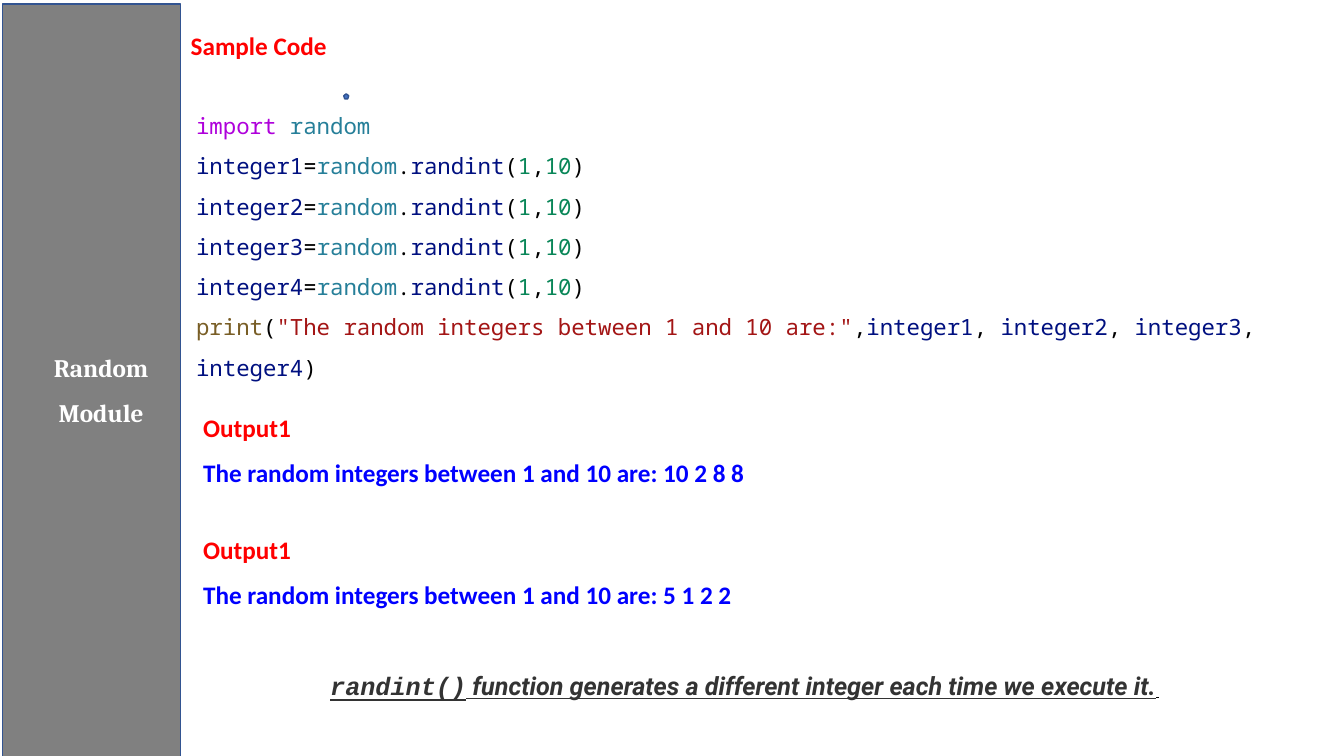
from pptx import Presentation
from pptx.dml.color import RGBColor
from pptx.enum.shapes import MSO_SHAPE as Shape
from pptx.enum.text import MSO_ANCHOR as Anchor, PP_ALIGN as Align
from pptx.util import Pt

WHITE = RGBColor(0xFF, 0xFF, 0xFF)
BLACK = RGBColor(0, 0, 0)
GRAY = RGBColor(0x80, 0x80, 0x80)
DARK = RGBColor(0x33, 0x33, 0x33)
RED = RGBColor(0xFF, 0, 0)
BLUE = RGBColor(0, 0, 0xFF)
STEEL = RGBColor(0x44, 0x72, 0xC4)
EDGE = RGBColor(0x32, 0x54, 0x91)
PURPLE = RGBColor(0xAF, 0, 0xDB)
TEAL = RGBColor(0x26, 0x7F, 0x99)
NAVY = RGBColor(0, 0x10, 0x80)
GREEN = RGBColor(0x09, 0x86, 0x58)
BROWN = RGBColor(0x79, 0x5E, 0x26)
MAROON = RGBColor(0xA3, 0x15, 0x15)


def style(font, name, size, color, bold=False):
    font.name, font.size, font.bold = name, Pt(size), bold
    font.color.rgb = color


def add_text(left, top, width, height):
    """Add an empty wrapping text box and return its text frame."""
    frame = slide.shapes.add_textbox(Pt(left), Pt(top), Pt(width), Pt(height)).text_frame
    frame.word_wrap = True
    return frame


deck = Presentation()
deck.slide_width, deck.slide_height = Pt(960), Pt(540)
slide = deck.slides.add_slide(deck.slide_layouts[5])

# Title
title = slide.shapes.title
title.left, title.top, title.width, title.height = Pt(129), Pt(18), Pt(248), Pt(29)
title.text_frame.vertical_anchor = Anchor.TOP
title.text_frame.text = "Sample Code"
para = title.text_frame.paragraphs[0]
para.alignment = Align.LEFT
style(para.font, "Calibri", 18, RED, True)

# Sidebar and small marker
bar = slide.shapes.add_shape(Shape.RECTANGLE, Pt(2), Pt(3), Pt(127), Pt(540))
mark = slide.shapes.add_shape(Shape.REGULAR_PENTAGON, Pt(245.5), Pt(67), Pt(3.6), Pt(3.6))
for shape, fill in ((bar, GRAY), (mark, STEEL)):
    shape.shadow.inherit = False
    shape.fill.solid()
    shape.fill.fore_color.rgb = fill
    shape.line.color.rgb = EDGE
    shape.line.width = Pt(1)
bar.text_frame.vertical_anchor = Anchor.MIDDLE
bar.text_frame.text = "Random Module"
para = bar.text_frame.paragraphs[0]
para.alignment = Align.CENTER
para.line_spacing = 1.5
para.space_before = Pt(6)
para._p.get_or_add_pPr().set("marL", str(Pt(13.5)))
style(para.font, "Cambria", 18, WHITE, True)

# Code listing
names = [f"integer{n}" for n in range(1, 5)]
lines = [[("import ", PURPLE), ("random", TEAL)]]
for name in names:
    lines.append([(name, NAVY), ("=", BLACK), ("random", TEAL), (".", BLACK),
                  ("randint", NAVY), ("(", BLACK), ("1", GREEN), (",", BLACK),
                  ("10", GREEN), (")", BLACK)])
call = [("print", BROWN), ("(", BLACK),
        ('"The random integers between 1 and 10 are:"', MAROON)]
for mark_text, name in zip((",", ", ", ", ", ", "), names):
    call += [(mark_text, BLACK), (name, NAVY)]
lines.append(call + [(")", BLACK)])

code = add_text(133, 67, 827, 179)
for i, line in enumerate(lines):
    para = code.add_paragraph() if i else code.paragraphs[0]
    para.line_spacing = 1.5
    para.font.name, para.font.size = "Noto Sans Mono", Pt(16)
    for text, color in line:
        run = para.add_run()
        run.text = text
        run.font.color.rgb = color

# Outputs
for top, width, height, values in ((280, 561, 69, "10 2 8 8"), (367, 788, 168, "5 1 2 2")):
    frame = add_text(138, top, width, height)
    frame.text = f"Output1\nThe random integers between 1 and 10 are: {values}"
    for para, color in zip(frame.paragraphs, (RED, BLUE)):
        para.line_spacing = 1.5
        style(para.font, "Calibri", 18, color, True)

# Closing note, below the second output
note = frame.add_paragraph()
note.alignment = Align.CENTER
note.line_spacing = 1.5
note.space_before = Pt(33)
note.font.bold = note.font.italic = note.font.underline = True
for text, face, size, color in (
    ("randint()", "Courier New", 18, DARK),
    ("\N{NO-BREAK SPACE}function generates a different integer each time we execute it.",
     "Roboto", 18, DARK),
    (" ", "Calibri", 10, BLACK),
):
    run = note.add_run()
    run.text = text
    style(run.font, face, size, color, True)

deck.save("out.pptx")
